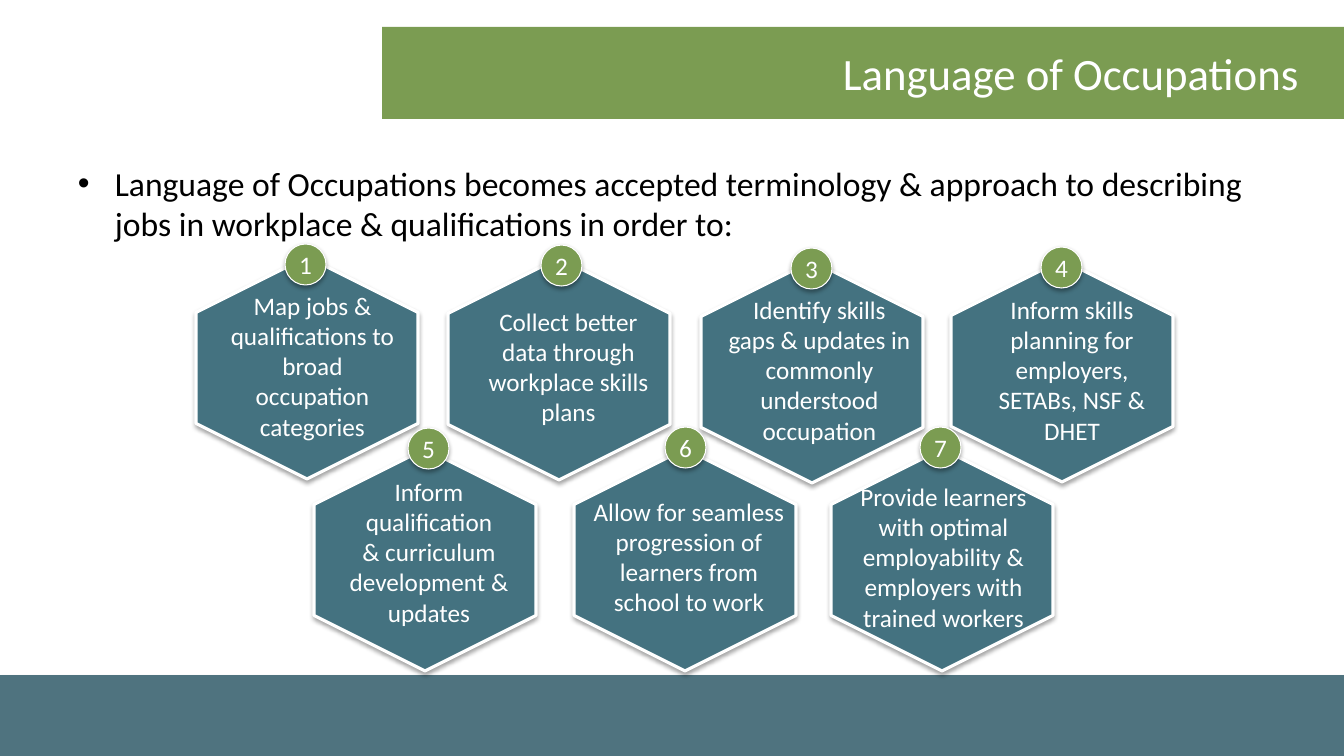
from lxml.etree import SubElement
from pptx import Presentation
from pptx.dml.color import RGBColor
from pptx.enum.shapes import MSO_SHAPE as Shape
from pptx.enum.text import MSO_ANCHOR as Anchor, PP_ALIGN as Align
from pptx.oxml.ns import qn
from pptx.util import Pt

PX = 12192000 / 1344
COLORS = {"white": "FFFFFF", "black": "000000", "green": "7B9C52",
          "teal": "447280", "footer": "4F737F"}
HEX_SIZE = 222
BADGE_SIZE = 41

# hexagon left and top, label offset and size, badge offset, wording
STEPS = [
    ((196, 257), (17, 28, 199, 163), (89, -13),
     "Map jobs & qualifications to broad occupation categories"),
    ((448, 258), (17, 43, 207, 132), (93, -13),
     "Collect better data through workplace skills plans"),
    ((701, 261), (15, 28, 207, 163), (90, -13),
     "Identify skills\vgaps & updates in commonly understood occupation"),
    ((951, 260), (23, 29, 196, 163), (90, -13),
     "Inform skills planning for employers, SETABs, NSF & DHET"),
    ((314, 449), (9, 22, 212, 163), (94, -21),
     "Inform qualification\n& curriculum development & updates"),
    ((574, 449), (9, 42, 212, 132), (91, -22),
     "Allow for seamless progression of learners from school to work"),
    ((831, 449), (11, 27, 203, 163), (89, -22),
     "Provide learners with optimal employability & employers with trained workers"),
]


def px(value):
    return round(value * PX)


def color(name):
    return RGBColor.from_string(COLORS[name])


def add_shadow(shape):
    effects = shape._element.spPr.find(qn("a:effectLst"))
    shadow = SubElement(effects, qn("a:outerShdw"), blurRad="40000",
                        dist="23000", dir="5400000", rotWithShape="0")
    tint = SubElement(shadow, qn("a:srgbClr"), val=COLORS["black"])
    SubElement(tint, qn("a:alpha"), val="35000")


def add_panel(page, kind, box, fill, line_width=0, shadow=True):
    shape = page.shapes.add_shape(kind, *map(px, box))
    shape.fill.solid()
    shape.fill.fore_color.rgb = color(fill)
    if line_width:
        shape.line.color.rgb = color("white")
        shape.line.width = Pt(line_width)
    else:
        shape.line.fill.background()
    shape.shadow.inherit = False
    if shadow:
        add_shadow(shape)
    return shape


def write(frame, text, size, ink="white", align=Align.CENTER, anchor=Anchor.TOP):
    frame.text = text
    frame.word_wrap = True
    frame.vertical_anchor = anchor
    for para in frame.paragraphs:
        para.alignment = align
        for span in para.runs:
            span.font.size = Pt(size)
            span.font.name = "Calibri"
            span.font.color.rgb = color(ink)


def add_label(page, box, text, size, **style):
    label = page.shapes.add_textbox(*map(px, box))
    write(label.text_frame, text, size, **style)
    return label


def add_header(page, box, title):
    left, top, width, height = box
    add_panel(page, Shape.RECTANGLE, box, "green", shadow=False)
    add_label(page, (left, top, width - 35, height), title, 32,
              align=Align.RIGHT, anchor=Anchor.MIDDLE)


def add_intro(page, box, text):
    label = add_label(page, box, text, 24, ink="black", align=Align.LEFT)
    props = label.text_frame.paragraphs[0]._p.get_or_add_pPr()
    props.set("marL", str(px(37)))
    props.set("indent", str(px(-37)))
    SubElement(props, qn("a:buFont"), typeface="Arial")
    SubElement(props, qn("a:buChar"), char="•")


def add_hexagon(page, left, top, label_box, text):
    hexagon = add_panel(page, Shape.HEXAGON, (left, top, HEX_SIZE, HEX_SIZE),
                        "teal", 2.25)
    hexagon.rotation = 90
    dx, dy, width, height = label_box
    add_label(page, (left + dx, top + dy, width, height), text, 18)


def add_badge(page, left, top, number):
    badge = add_panel(page, Shape.OVAL, (left, top, BADGE_SIZE, BADGE_SIZE),
                      "green", 0.75)
    frame = badge.text_frame
    frame.margin_left = frame.margin_right = 0
    frame.margin_top = frame.margin_bottom = 0
    write(frame, str(number), 18, anchor=Anchor.MIDDLE)


def add_steps(page):
    for (left, top), label_box, _, text in STEPS:
        add_hexagon(page, left, top, label_box, text)
    # Badges lie above every hexagon
    for number, ((left, top), _, (dx, dy), _) in enumerate(STEPS, 1):
        add_badge(page, left + dx, top + dy, number)


def main():
    deck = Presentation()
    deck.slide_width, deck.slide_height = px(1344), px(756)
    page = deck.slides.add_slide(deck.slide_layouts[6])
    # Footer band
    add_panel(page, Shape.RECTANGLE, (0, 675, 1344, 81), "footer")
    add_header(page, (382, 27, 962, 92), "Language of Occupations")
    add_intro(page, (68, 158, 1210, 89),
              "Language of Occupations becomes accepted terminology & approach "
              "to describing jobs in workplace & qualifications in order to:")
    add_steps(page)
    deck.save("out.pptx")


if __name__ == "__main__":
    main()
